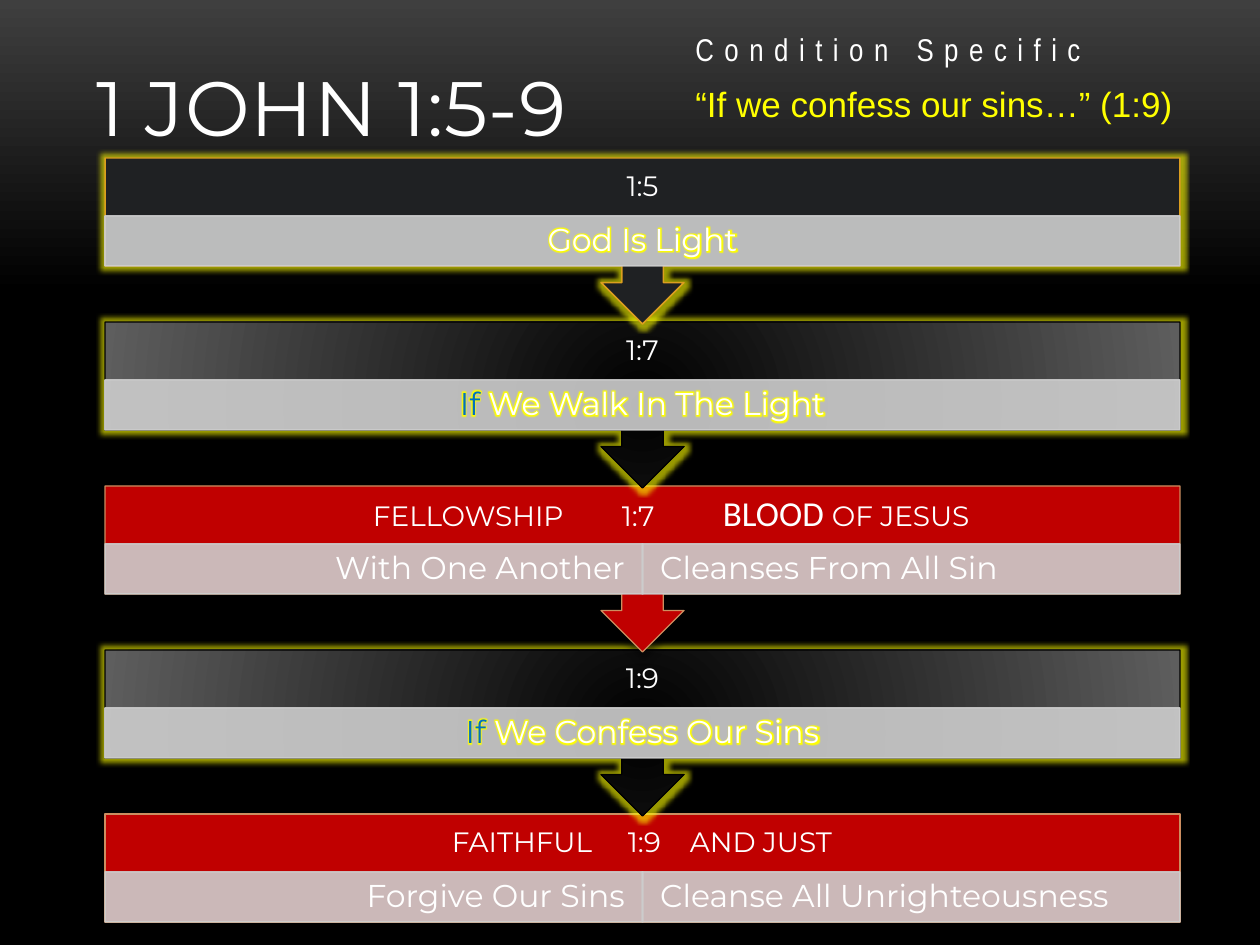
from pptx import Presentation
from pptx.dml.color import RGBColor
from pptx.enum.shapes import MSO_SHAPE as SHAPE
from pptx.enum.text import MSO_ANCHOR as ANCHOR, PP_ALIGN as ALIGN
from pptx.oxml import parse_xml
from pptx.oxml.ns import nsdecls, qn
from pptx.util import Emu, Pt

PX = 7257  # EMU per px, 126 px to the inch
COLORS = dict(white="FFFFFF", yellow="FFFF00", blue="0070C0", black="000000",
              smoke="3F3F3F", grey="5E5E5E", dark="1F2123", red="C00000",
              gold="DC9E1F", tan="CC8E60", silver="CDCDCD")
MONT = "Montserrat"

# Content: a run is (text, size, font, colour)
def head(text):
    return (text, 16, MONT, "white")


def body(text, color="white"):
    return (text, 18, MONT, color)


TITLE = [("1 JOHN 1:5-9", 44, MONT, "white")]
CONDITION = [("Condition Specific", 18, "Arial Narrow", "white")]
QUOTE = [("“If we confess our sins…” (1:9)", 20, "Arial", "yellow")]
STEPS = [  # style, heading runs, heading tab stops in px, cells
    ("start", [head("1:5")], [], [[body("God Is Light")]]),
    ("if", [head("1:7")], [],
     [[body("If", "blue"), body(" We Walk In The Light")]]),
    ("result",
     [head("\tFELLOWSHIP\t1:7\t"), ("BLOOD ", 20, "Calibri", "white"),
      head("OF JESUS")],
     [253, 502, 603],
     [[body("With One Another")], [body("Cleanses From All Sin")]]),
    ("if", [head("1:9")], [],
     [[body("If", "blue"), body(" We Confess Our Sins")]]),
    ("result", [head("\tFAITHFUL\t1:9\tAND JUST")], [332, 508, 570],
     [[body("Forgive Our Sins")], [body("Cleanse All Unrighteousness")]]),
]
# style: fill, line colour, line width, glows
STYLES = {
    "start": ("dark", "gold", 0.85, True),
    "if": (None, "black", 0.75, True),
    "result": ("red", "tan", 0.75, False),
}

# Geometry in px
LEFT, TOP, WIDTH, PITCH = 105, 158, 1075, 164
CALLOUT_H, BLOCK_H, HEAD_H, CELL_H = 166, 108, 58, 50


def rgb(name):
    return RGBColor.from_string(COLORS[name])


def box(*lengths):
    return [Emu(n * PX) for n in lengths]


def gradient(stops, direction):
    gs = "".join(f'<a:gs pos="{pos * 1000}"><a:srgbClr val="{COLORS[c]}"/></a:gs>'
                 for pos, c in stops)
    return parse_xml(f'<a:gradFill {nsdecls("a")} rotWithShape="1">'
                     f'<a:gsLst>{gs}</a:gsLst>{direction}</a:gradFill>')


def replace_solid(parent, new):
    old = parent.find(qn("a:solidFill"))
    parent.replace(old, new)


def effect(tag, attrs, color, alpha):
    return parse_xml(f'<a:{tag} {nsdecls("a")} {attrs}><a:srgbClr val="{COLORS[color]}">'
                     f'<a:alpha val="{alpha * 1000}"/></a:srgbClr></a:{tag}>')


def glow(points, alpha):
    return effect("glow", f'rad="{Pt(points)}"', "yellow", alpha)


def set_alpha(fill_parent, percent):
    clr = fill_parent.find(qn("a:solidFill")).find(qn("a:srgbClr"))
    clr.append(parse_xml(f'<a:alpha {nsdecls("a")} val="{percent * 1000}"/>'))


def write(sp, runs, align=ALIGN.LEFT, anchor=ANCHOR.TOP, inset=None,
          spacing=None, tabs=(), tracking=0, glows=False, wrap=True):
    tf = sp.text_frame
    tf.word_wrap = wrap
    tf.vertical_anchor = anchor
    if inset:
        x, y = box(*inset)
        tf.margin_left = tf.margin_right = x
        tf.margin_top = tf.margin_bottom = y
    p = tf.paragraphs[0]
    p.alignment = align
    p.line_spacing = spacing
    if tabs:
        stops = "".join(f'<a:tab pos="{t * PX}" algn="l"/>' for t in tabs)
        p._p.get_or_add_pPr().append(
            parse_xml(f'<a:tabLst {nsdecls("a")}>{stops}</a:tabLst>'))
    for text, size, font, color in runs:
        r = p.add_run()
        r.text = text
        r.font.size = Pt(size)
        r.font.color.rgb = rgb(color)
        rPr = r._r.get_or_add_rPr()
        if tracking:
            rPr.set("spc", str(int(tracking * 100)))
        if glows:
            effects = parse_xml(f'<a:effectLst {nsdecls("a")}/>')
            effects.append(glow(4, 100))
            rPr.append(effects)
        r.font.name = font


def add_shape(slide, kind, place, fill, line, width):
    sp = slide.shapes.add_shape(kind, *box(*place))
    sp.shadow.inherit = False
    sp.fill.solid()
    sp.fill.fore_color.rgb = rgb(fill)
    sp.line.color.rgb = rgb(line)
    sp.line.width = Pt(width)
    return sp


def add_step(slide, index):
    style, heading, tabs, cells = STEPS[index]
    fill, line, width, glows = STYLES[style]
    top = TOP + index * PITCH
    last = index == len(STEPS) - 1

    # Block, with an arrow down to the next one
    kind, height = ((SHAPE.RECTANGLE, BLOCK_H) if last
                    else (SHAPE.UP_ARROW_CALLOUT, CALLOUT_H))
    sp = add_shape(slide, kind, (LEFT, top, WIDTH, height),
                   fill or "black", line, width)
    if not last:
        sp.rotation = 180
    spPr = sp._element.spPr
    if fill is None:
        replace_solid(spPr, gradient(
            [(0, "black"), (100, "grey")],
            '<a:path path="circle"><a:fillToRect l="100000" t="100000" '
            'r="100000" b="100000"/></a:path>'))
    shadow = f'blurRad="{Pt(4)}" dist="{Pt(3.4)}" dir="5400000" rotWithShape="0"'
    spPr.find(qn("a:effectLst")).append(
        glow(5, 60) if glows else effect("outerShdw", shadow, "black", 40))

    # Heading
    tb = slide.shapes.add_textbox(*box(LEFT, top, WIDTH, HEAD_H))
    write(tb, heading, ALIGN.LEFT if tabs else ALIGN.CENTER, ANCHOR.MIDDLE,
          (15, 15), 0.9, tabs)

    # Cells
    aligns = [ALIGN.CENTER] if len(cells) == 1 else [ALIGN.RIGHT, ALIGN.LEFT]
    cell_w = WIDTH / len(cells)
    for i, (runs, align) in enumerate(zip(cells, aligns)):
        place = (LEFT + i * cell_w, top + HEAD_H, cell_w, CELL_H)
        cell = add_shape(slide, SHAPE.RECTANGLE,
                         [round(n) for n in place], "silver", "silver", 0.85)
        set_alpha(cell._element.spPr, 90)
        set_alpha(cell._element.spPr.find(qn("a:ln")), 90)
        write(cell, runs, align, ANCHOR.MIDDLE, (18, 4), 0.9, glows=glows)


def main():
    prs = Presentation()
    prs.slide_width, prs.slide_height = box(1260, 945)
    slide = prs.slides.add_slide(prs.slide_layouts[6])

    # Background
    slide.background.fill.solid()
    replace_solid(slide.element.find(".//" + qn("p:bgPr")), gradient(
        [(0, "smoke"), (31, "black"), (100, "black")],
        '<a:lin ang="5400000" scaled="0"/>'))

    # Title and captions
    write(slide.shapes.add_textbox(*box(84, 0, 1092, 158)), TITLE,
          anchor=ANCHOR.BOTTOM, tracking=0.5)
    write(slide.shapes.add_textbox(*box(683, 76, 505, 55)), QUOTE, wrap=False)
    write(slide.shapes.add_textbox(*box(683, 24, 426, 50)), CONDITION,
          tracking=6, wrap=False)

    # Steps from the bottom up, so each arrow lies over the next block
    for index in reversed(range(len(STEPS))):
        add_step(slide, index)

    prs.save("out.pptx")


if __name__ == "__main__":
    main()
